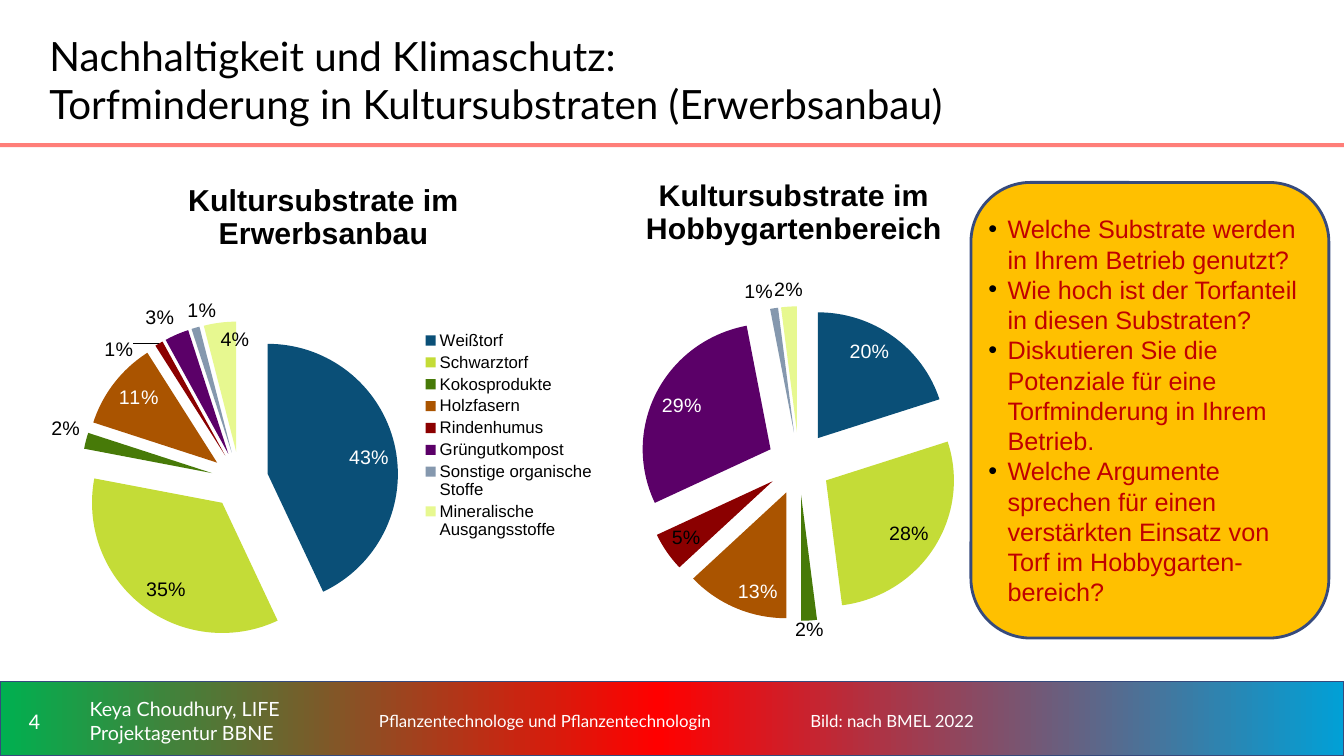
from copy import deepcopy

from lxml import etree
from pptx import Presentation
from pptx.chart.data import CategoryChartData
from pptx.dml.color import RGBColor
from pptx.enum import chart as ch, shapes, text
from pptx.oxml import parse_xml
from pptx.oxml.ns import nsdecls, qn
from pptx.util import Inches, Pt

# Content
TITLE = "Nachhaltigkeit und Klimaschutz:\vTorfminderung in Kultursubstraten (Erwerbsanbau)"
QUESTIONS = [
    "Welche Substrate werden in Ihrem Betrieb genutzt?",
    "Wie hoch ist der Torfanteil in diesen Substraten?",
    "Diskutieren Sie die Potenziale für eine Torfminderung in Ihrem Betrieb.",
    "Welche Argumente sprechen für einen verstärkten Einsatz von Torf im Hobbygarten-bereich?",
]
SUBSTRATES = ["Weißtorf", "Schwarztorf", "Kokosprodukte", "Holzfasern", "Rindenhumus",
              "Grüngutkompost", "Sonstige organische Stoffe", "Mineralische Ausgangsstoffe"]
SLICES = ["0A4F77", "C4DC37", "477A08", "AA5400", "8B0000", "5B0068", "8598AE", "E7F890"]
# outside, white: slice numbers; shift: label offsets as shares of the chart
CHARTS = [
    dict(title="Kultursubstrate im Erwerbsanbau", box=(0.41, 1.57, 5.6, 5.49),
         cats=SUBSTRATES, values=[43, 35, 2, 11, 1, 3, 1, 4], explode=22,
         plot=(0.07, 0.295, 0.563, 0.574), legend=True,
         outside={2, 4, 5, 6}, white={0, 3}, shift={4: (-0.04, 0.04), 6: (0.04, 0)}),
    dict(title="Kultursubstrate im Hobbygartenbereich", box=(5.59, 1.54, 4.57, 4.89),
         cats=[str(n) for n in range(1, 9)], values=[20, 28, 2, 13, 5, 29, 1, 2], explode=25,
         plot=(0.164, 0.295, 0.694, 0.728), legend=False,
         outside={2, 6, 7}, white={0, 3, 5}, shift={}),
]
C = dict(black="000000", white="FFFFFF", rule="FF7E79", outline="364A7D", panel="FFC000",
         question="C00000", green="00B050", red="FF0000", blue="01A0D6")
# lines, box, font format, line spacing, alignment
FOOTER = [
    (["4"], (0, 6.84, 0.68, 0.61), dict(name="Calibri", size=Pt(16)), 1, "CENTER"),
    (["Pflanzentechnologe und Pflanzentechnologin"], (3.66, 6.84, 4.19, 0.61),
     dict(name="Lato", size=Pt(12)), 1.1, "LEFT"),
    (["Bild: nach BMEL 2022"], (7.94, 6.84, 5.05, 0.61),
     dict(name="Lato", size=Pt(12)), 1.1, "LEFT"),
    (["Keya Choudhury, LIFE", "Projektagentur BBNE"], (0.79, 6.84, 2.78, 0.62),
     dict(name="Lato", size=Pt(14)), 1, "LEFT"),
]


def rgb(value):
    return RGBColor.from_string(value)


def inches(box):
    return [Inches(v) for v in box]


def style(font, color, **values):
    for key, value in values.items():
        setattr(font, key, value)
    font.color.rgb = rgb(color)


def add_box(kind, box, fill=None, line=None, width=1):
    sp = s.shapes.add_shape(kind, *inches(box))
    sp.shadow.inherit = False
    if fill:
        sp.fill.solid()
        sp.fill.fore_color.rgb = rgb(fill)
    if line:
        sp.line.color.rgb = rgb(line)
        sp.line.width = Pt(width)
    else:
        sp.line.fill.background()
    return sp


def write(tf, lines, color, font, spacing=1, align="LEFT", bullets=False):
    tf.word_wrap = True
    tf.auto_size = text.MSO_AUTO_SIZE.NONE
    tf.vertical_anchor = text.MSO_ANCHOR.MIDDLE
    for i, line in enumerate(lines):
        p = tf.paragraphs[0] if i == 0 else tf.add_paragraph()
        p.text = line
        p.alignment = getattr(text.PP_ALIGN, align)
        p.line_spacing = spacing
        if bullets:
            pPr = p._p.get_or_add_pPr()
            pPr.set("marL", str(Inches(0.19)))
            pPr.set("indent", str(-Inches(0.19)))
            color_el = etree.SubElement(pPr, qn("a:buClr"))
            etree.SubElement(color_el, qn("a:srgbClr"), val=C["black"])
            etree.SubElement(pPr, qn("a:buFont"), typeface="Arial")
            etree.SubElement(pPr, qn("a:buChar"), char="•")
        for r in p.runs:
            style(r.font, color, **font)


def manual_layout(**values):
    parts = "".join(f'<c:{k} val="{v}"/>' for k, v in values.items())
    return parse_xml(f'<c:layout {nsdecls("c")}><c:manualLayout>{parts}'
                     '</c:manualLayout></c:layout>')


def add_pie(d):
    data = CategoryChartData()
    data.categories = d["cats"]
    data.add_series("Series 1", d["values"])
    chart = s.shapes.add_chart(ch.XL_CHART_TYPE.PIE, *inches(d["box"]), data).chart
    style(chart.font, C["black"], name="Arial", size=Pt(18))
    chart.has_title = True
    tf = chart.chart_title.text_frame
    tf.text = d["title"]
    style(tf.paragraphs[0].runs[0].font, C["black"], name="Arial", size=Pt(21.6), bold=True)
    chart.has_legend = d["legend"]
    if d["legend"]:
        chart.legend.position = ch.XL_LEGEND_POSITION.RIGHT
        chart.legend.include_in_layout = False
        style(chart.legend.font, C["black"], name="Arial", size=Pt(12))

    plot = chart.plots[0]
    plot.vary_by_categories = True
    area = chart._chartSpace.find(".//" + qn("c:plotArea"))
    for old in area.findall(qn("c:layout")):
        area.remove(old)
    x, y, w, h = d["plot"]
    area.insert(0, manual_layout(layoutTarget="inner", xMode="edge", yMode="edge",
                                 x=x, y=y, w=w, h=h))
    # Slices and their percent labels
    series = plot.series[0]
    for i, color in enumerate(SLICES):
        point = series.points[i]
        point.format.fill.solid()
        point.format.fill.fore_color.rgb = rgb(color)
        point.format.line.fill.background()
        label = point.data_label
        style(label.font, C["white" if i in d["white"] else "black"], name="Arial", size=Pt(14))
        label.position = getattr(ch.XL_LABEL_POSITION,
                                 "OUTSIDE_END" if i in d["outside"] else "INSIDE_END")
    ser = series._element
    explosion = parse_xml(f'<c:explosion {nsdecls("c")} val="{d["explode"]}"/>')
    ser.find(qn("c:tx")).addnext(explosion)
    for i, label in enumerate(ser.iter(qn("c:dLbl"))):
        label.find(qn("c:showVal")).set("val", "0")
        label.find(qn("c:showPercent")).set("val", "1")
        if i in d["shift"]:
            dx, dy = d["shift"][i]
            label.find(qn("c:idx")).addnext(manual_layout(x=dx, y=dy))


prs = Presentation()
prs.slide_width, prs.slide_height = Inches(13.33), Inches(7.5)
s = prs.slides.add_slide(prs.slide_layouts[5])

# Footer band and title rule
band = add_box(shapes.MSO_SHAPE.RECTANGLE, (0, 6.76, 13.33, 0.74), line=C["outline"])
band.fill.gradient()
band.fill.gradient_angle = 0
first = band.fill.gradient_stops[0]._gs
first.addnext(deepcopy(first))
for stop, color, position in zip(band.fill.gradient_stops, ("green", "red", "blue"), (0, 0.49, 1)):
    stop.color.rgb = rgb(C[color])
    stop.position = position
add_box(shapes.MSO_SHAPE.RECTANGLE, (0, 1.42, 13.33, 0.04), C["rule"])

# Title
title = s.shapes.title
title.left, title.top, title.width, title.height = inches((0.39, 0.2, 9.84, 1.18))
write(title.text_frame, [TITLE], C["black"], dict(name="Lato", size=Pt(28.8)))

# Footer texts
for lines, box, font, spacing, align in FOOTER:
    write(s.shapes.add_textbox(*inches(box)).text_frame, lines, C["white"], font, spacing, align)

# Question panel
panel = add_box(shapes.MSO_SHAPE.ROUNDED_RECTANGLE, (9.63, 1.81, 3.55, 4.52),
                C["panel"], C["outline"], 2)
tf = panel.text_frame
for side in ("left", "top", "right", "bottom"):
    setattr(tf, f"margin_{side}", 0)
write(tf, QUESTIONS, C["question"], dict(name="Arial", size=Pt(18)), bullets=True)

# Pie charts
for d in CHARTS:
    add_pie(d)

prs.save("out.pptx")
